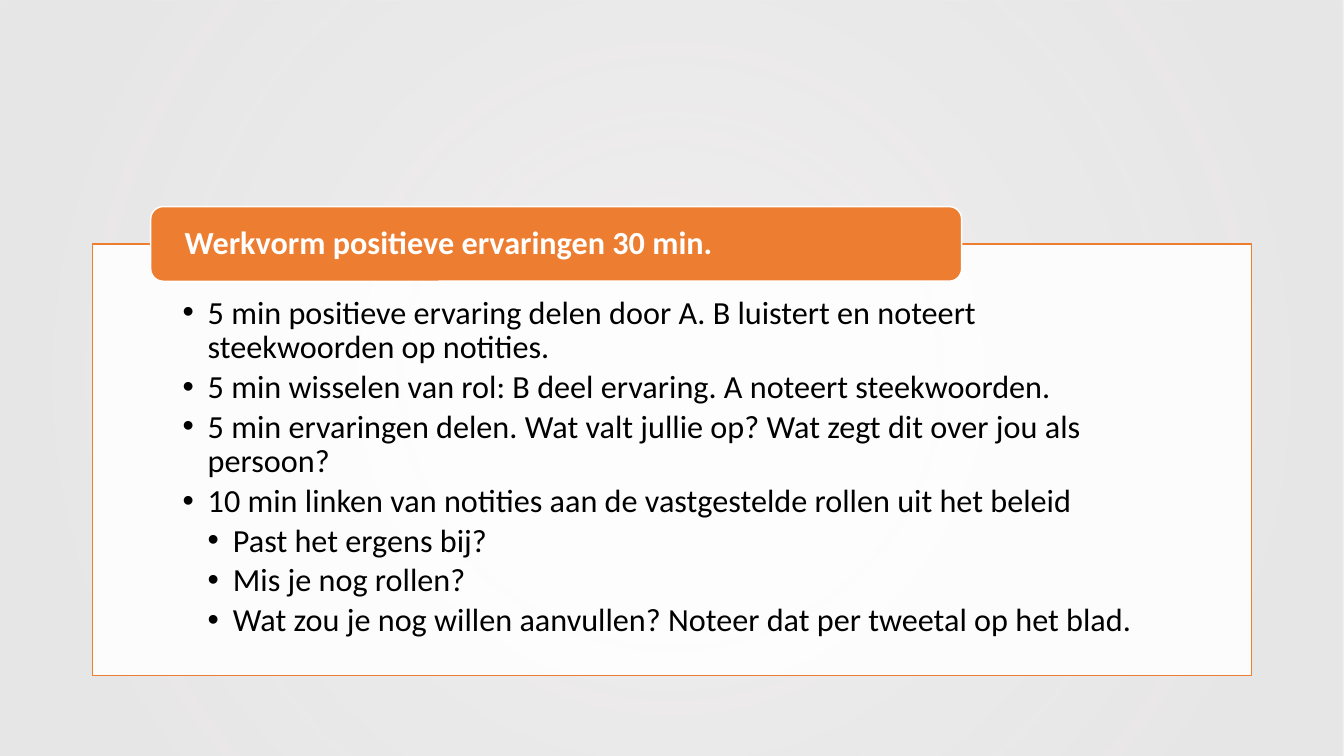
from lxml.etree import SubElement
from pptx import Presentation
from pptx.dml.color import RGBColor
from pptx.enum.shapes import MSO_SHAPE as Shape
from pptx.enum.text import MSO_ANCHOR as Anchor, PP_ALIGN as Align
from pptx.oxml import parse_xml
from pptx.oxml.ns import nsdecls, qn
from pptx.util import Inches, Pt

HEADING = "Werkvorm positieve ervaringen 30 min."
STEPS = [  # (level, text)
    (1, "5 min positieve ervaring delen door A. B luistert en noteert steekwoorden op notities."),
    (1, "5 min wisselen van rol: B deel ervaring. A noteert steekwoorden."),
    (1, "5 min ervaringen delen. Wat valt jullie op? Wat zegt dit over jou als persoon?"),
    (1, "10 min linken van notities aan de vastgestelde rollen uit het beleid"),
    (2, "Past het ergens bij?"),
    (2, "Mis je nog rollen?"),
    (2, "Wat zou je nog willen aanvullen? Noteer dat per tweetal op het blad."),
]

ORANGE = RGBColor(0xED, 0x7D, 0x31)
WHITE = RGBColor(0xFF, 0xFF, 0xFF)
BLACK = RGBColor(0, 0, 0)
GREY = RGBColor(0xE7, 0xE6, 0xE6)
BACKDROP_STOPS = [(10, 68), (85, 97)]  # position and opacity, in percent

WIDTH, HEIGHT = 13.33, 7.5
PANEL_LEFT, PANEL_TOP, PANEL_HEIGHT = 0.92, 2.42, 4.28
PANEL_WIDTH = WIDTH - 2 * PANEL_LEFT
TAB_HEIGHT = 0.74
INDENT = 0.25


def add_box(slide, kind, left, top, width, height, fill=None, line=None):
    shape = slide.shapes.add_shape(
        kind, Inches(left), Inches(top), Inches(width), Inches(height))
    shape.shadow.inherit = False
    if fill is not None:
        shape.fill.solid()
        shape.fill.fore_color.rgb = fill
    if line is None:
        shape.line.fill.background()
    else:
        shape.line.color.rgb = line
        shape.line.width = Pt(1)
    return shape


def set_opacity(shape, percent):
    color = shape._element.spPr.find(qn("a:solidFill"))[0]
    SubElement(color, qn("a:alpha"), val=str(percent * 1000))


def set_radial_fill(shape, color, stops):
    """Fill from the centre outwards with one colour of changing opacity."""
    stop_xml = "".join(
        f'<a:gs pos="{position * 1000}"><a:srgbClr val="{color}">'
        f'<a:alpha val="{opacity * 1000}"/></a:srgbClr></a:gs>'
        for position, opacity in stops)
    gradient = parse_xml(
        f'<a:gradFill {nsdecls("a")}><a:gsLst>{stop_xml}</a:gsLst>'
        '<a:path path="circle"><a:fillToRect l="50000" t="50000" r="50000" b="50000"/>'
        '</a:path></a:gradFill>')
    shape._element.spPr.find(qn("a:prstGeom")).addnext(gradient)


def set_margins(shape, side, top=0, bottom=0, anchor=Anchor.TOP):
    frame = shape.text_frame
    frame.word_wrap = True
    frame.vertical_anchor = anchor
    frame.margin_left = frame.margin_right = Inches(side)
    frame.margin_top, frame.margin_bottom = Inches(top), Inches(bottom)


def write(paragraph, text, color=BLACK, bold=False, level=0, after=0):
    """Write one paragraph; a level above 0 gives it a bullet."""
    paragraph.alignment = Align.LEFT
    paragraph.line_spacing = 0.9
    paragraph.space_after = Pt(after)
    if level:
        paragraph.level = level
        properties = paragraph._p.get_or_add_pPr()
        properties.set("marL", str(Inches(level * INDENT)))
        properties.set("indent", str(-Inches(INDENT)))
        SubElement(properties, qn("a:buFont"), typeface="Arial")
        SubElement(properties, qn("a:buChar"), char="•")
    run = paragraph.add_run()
    run.text = text
    run.font.name = "Calibri"
    run.font.size = Pt(23)
    run.font.bold = bold
    run.font.color.rgb = color


def main():
    presentation = Presentation()
    presentation.slide_width, presentation.slide_height = Inches(WIDTH), Inches(HEIGHT)
    slide = presentation.slides.add_slide(presentation.slide_layouts[6])

    backdrop = add_box(slide, Shape.RECTANGLE, 0, 0, WIDTH, HEIGHT)
    set_radial_fill(backdrop, GREY, BACKDROP_STOPS)

    panel = add_box(slide, Shape.RECTANGLE, PANEL_LEFT, PANEL_TOP,
                    PANEL_WIDTH, PANEL_HEIGHT, WHITE, ORANGE)
    set_opacity(panel, 90)
    set_margins(panel, side=0.89, top=0.52, bottom=0.18)
    frame = panel.text_frame
    for index, (level, text) in enumerate(STEPS):
        paragraph = frame.add_paragraph() if index else frame.paragraphs[0]
        write(paragraph, text, level=level, after=3.45)

    tab = add_box(slide, Shape.ROUNDED_RECTANGLE,
                  PANEL_LEFT + 0.05 * PANEL_WIDTH, PANEL_TOP - TAB_HEIGHT / 2,
                  0.7 * PANEL_WIDTH, TAB_HEIGHT, ORANGE, WHITE)
    set_margins(tab, side=0.3, anchor=Anchor.MIDDLE)
    write(tab.text_frame.paragraphs[0], HEADING, color=WHITE, bold=True)

    presentation.save("out.pptx")


if __name__ == "__main__":
    main()
